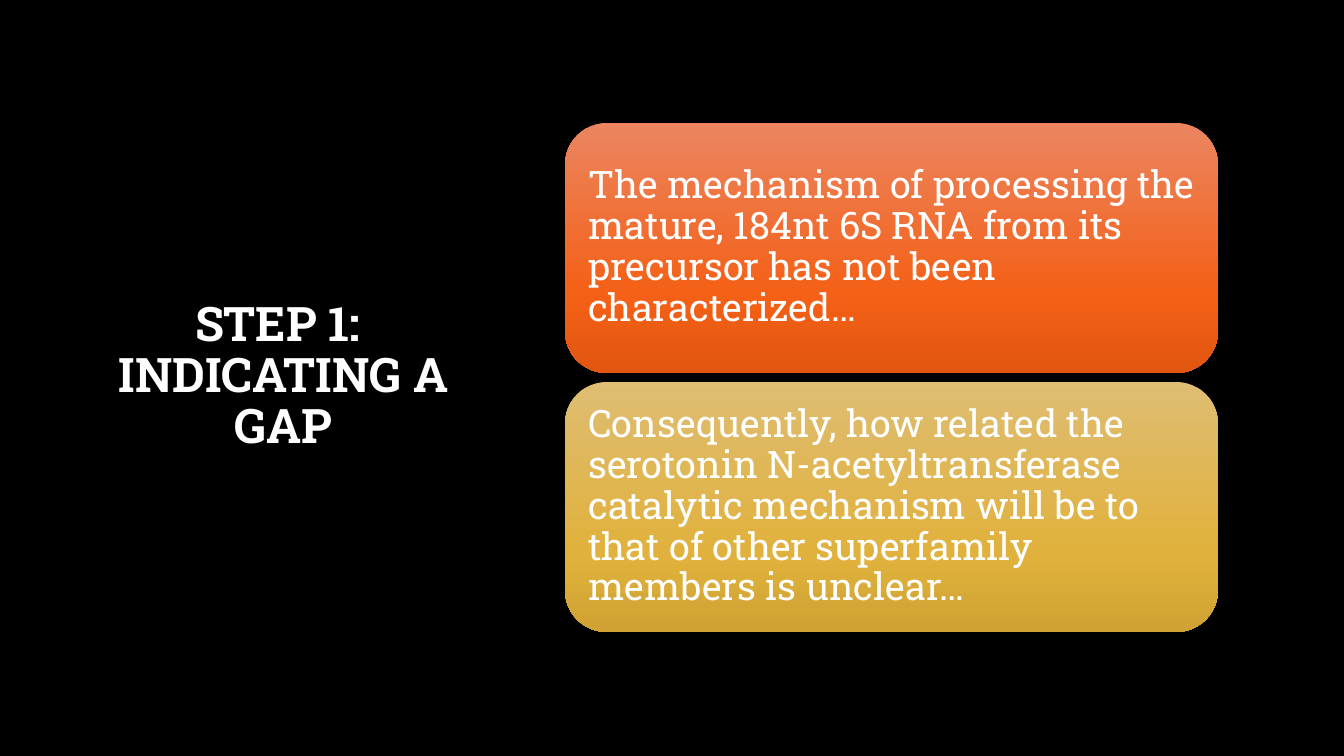
"""Build the slide on indicating a research gap, with two quoted examples."""
import dataclasses

import lxml.etree
import pptx
import pptx.dml.color
import pptx.enum.shapes
import pptx.enum.text
import pptx.oxml.ns
import pptx.slide
import pptx.text.text
import pptx.util

EMU_PER_PX = 914400 / 100.8


@dataclasses.dataclass(frozen=True)
class Theme:
    font: str = "Roboto Slab"
    background: str = "000000"
    text: str = "FFFFFF"
    title_size: int = 34
    card_size: int = 27
    orange: tuple[str, ...] = ("EB8560", "F46016", "E15610")
    gold: tuple[str, ...] = ("DFBD72", "E0B13C", "CFA233")
    stops: tuple[int, ...] = (0, 69, 100)


@dataclasses.dataclass(frozen=True)
class Card:
    text: str
    gradient: tuple[str, ...]


THEME = Theme()
CARD_LEFT, CARD_TOP, CARD_WIDTH, CARD_HEIGHT, CARD_GAP = 565, 123, 653, 250, 9
CARD_INSET = 11
CARDS = (
    Card("The mechanism of processing the mature, 184nt 6S RNA from its "
         "precursor has not been characterized…", THEME.orange),
    Card("Consequently, how related the serotonin N-acetyltransferase catalytic "
         "mechanism will be to that of other superfamily members is unclear…", THEME.gold),
)


def px(length: int) -> pptx.util.Emu:
    return pptx.util.Emu(round(length * EMU_PER_PX))


def rgb(code: str) -> pptx.dml.color.RGBColor:
    return pptx.dml.color.RGBColor.from_string(code)


def write(tf: pptx.text.text.TextFrame, text: str, size: int, bold: bool,
          align: pptx.enum.text.PP_ALIGN) -> None:
    tf.word_wrap = True
    tf.auto_size = pptx.enum.text.MSO_AUTO_SIZE.NONE
    tf.vertical_anchor = pptx.enum.text.MSO_ANCHOR.MIDDLE
    p = tf.paragraphs[0]
    p.alignment = align
    p.line_spacing = 0.9
    r = p.add_run()
    r.text = text
    r.font.name = THEME.font
    r.font.size = pptx.util.Pt(size)
    r.font.bold = bold
    r.font.color.rgb = rgb(THEME.text)


def fill_gradient(sp: pptx.shapes.autoshape.Shape, colors: tuple[str, ...]) -> None:
    sp.fill.gradient()
    sp.fill.gradient_angle = 270
    qn = pptx.oxml.ns.qn
    stops = sp._element.spPr.find(".//" + qn("a:gsLst"))
    for stop in list(stops):
        stops.remove(stop)
    for position, color in zip(THEME.stops, colors):
        stop = lxml.etree.SubElement(stops, qn("a:gs"), pos=str(position * 1000))
        lxml.etree.SubElement(stop, qn("a:srgbClr"), val=color)


def add_title(s: pptx.slide.Slide, text: str) -> None:
    sp = s.shapes.title
    sp.left, sp.top, sp.width, sp.height = px(83), px(68), px(401), px(618)
    write(sp.text_frame, text, THEME.title_size, True, pptx.enum.text.PP_ALIGN.CENTER)


def add_card(s: pptx.slide.Slide, card: Card, top: int) -> None:
    sp = s.shapes.add_shape(pptx.enum.shapes.MSO_SHAPE.ROUNDED_RECTANGLE,
                            px(CARD_LEFT), px(top), px(CARD_WIDTH), px(CARD_HEIGHT))
    sp.shadow.inherit = False
    sp.line.fill.background()
    fill_gradient(sp, card.gradient)
    tf = sp.text_frame
    tf.margin_left = tf.margin_right = tf.margin_top = tf.margin_bottom = px(CARD_INSET)
    write(tf, card.text, THEME.card_size, False, pptx.enum.text.PP_ALIGN.LEFT)


def main() -> None:
    prs = pptx.Presentation()
    prs.slide_width, prs.slide_height = px(1344), px(756)
    s = prs.slides.add_slide(prs.slide_layouts.get_by_name("Title Only"))
    s.background.fill.solid()
    s.background.fill.fore_color.rgb = rgb(THEME.background)
    add_title(s, "STEP 1:  INDICATING A GAP")
    for i, card in enumerate(CARDS):
        add_card(s, card, CARD_TOP + i * (CARD_HEIGHT + CARD_GAP))
    prs.save("out.pptx")


if __name__ == "__main__":
    main()
